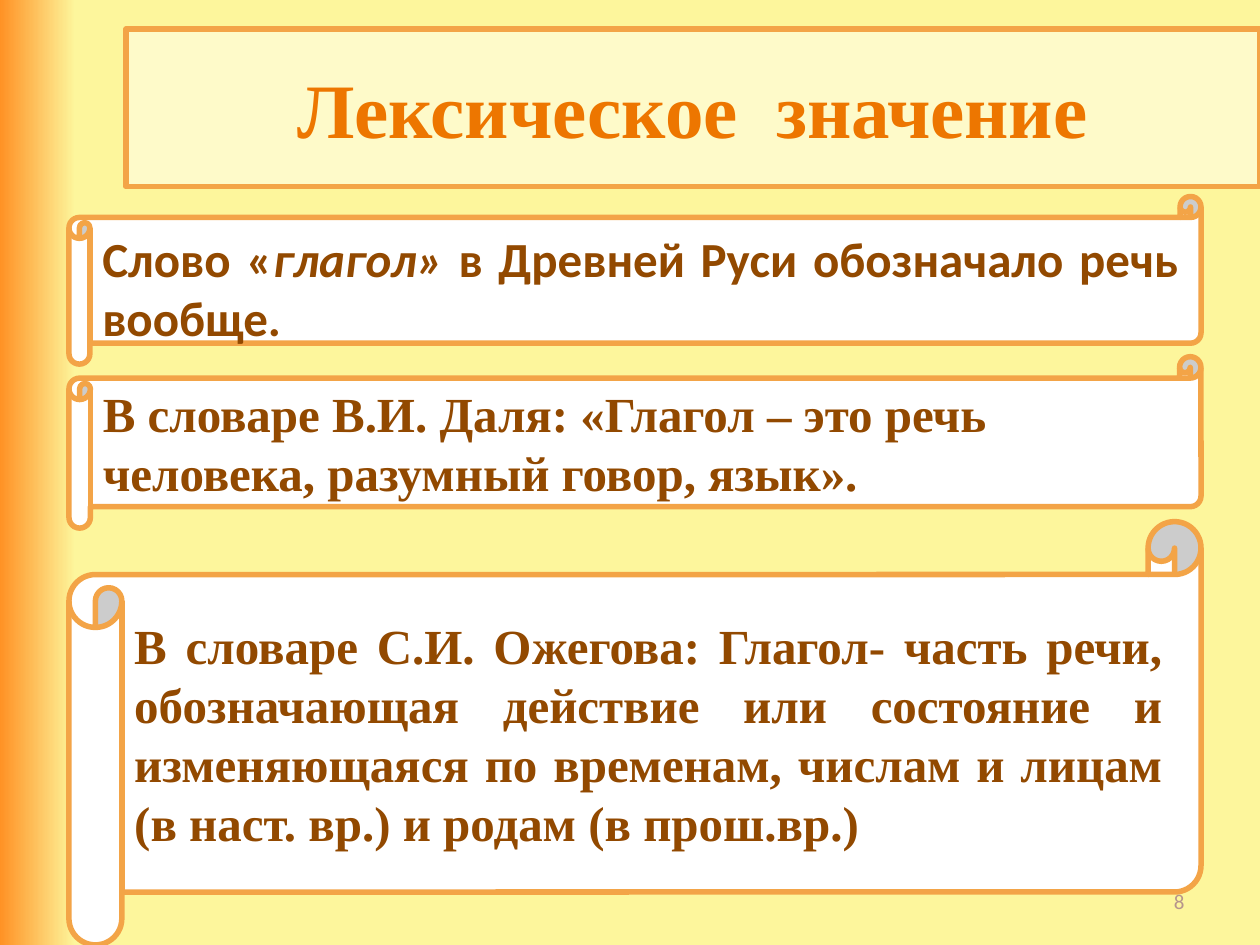
from dataclasses import dataclass

from pptx import Presentation
from pptx.dml.color import RGBColor
from pptx.enum import shapes, text
from pptx.util import Pt


@dataclass(frozen=True)
class Theme:
    yellow: str = "FDF69C"
    orange: str = "FF9225"
    white: str = "FFFFFF"
    cream: str = "FEFAC9"
    border: str = "F3A447"
    brown: str = "924900"
    title: str = "ED7600"
    muted: str = "B6958C"
    serif: str = "Times New Roman"
    sans: str = "Calibri"
    title_size: int = 44
    body_size: int = 28
    number_size: int = 12


theme = Theme()
align = text.PP_ALIGN
kinds = shapes.MSO_SHAPE


def write(sp, *parts, font=theme.serif, size=theme.body_size, color=theme.brown,
          bold=True, alignment=align.JUSTIFY):
    tf = sp.text_frame
    tf.word_wrap = True
    tf.vertical_anchor = text.MSO_ANCHOR.MIDDLE
    p = tf.paragraphs[0]
    p.alignment = alignment
    for words, italic in parts:
        r = p.add_run()
        r.text = words
        r.font.name = font
        r.font.size = Pt(size)
        r.font.bold = bold
        r.font.italic = italic
        r.font.color.rgb = RGBColor.from_string(color)


def add_panel(kind, box, fill):
    sp = s.shapes.add_shape(kind, *map(Pt, box))
    sp.shadow.inherit = False
    sp.fill.solid()
    sp.fill.fore_color.rgb = RGBColor.from_string(fill)
    sp.line.color.rgb = RGBColor.from_string(theme.border)
    sp.line.width = Pt(3.15)
    return sp


prs = Presentation()
prs.slide_width, prs.slide_height = Pt(720), Pt(540)
s = prs.slides.add_slide(prs.slide_layouts[6])

bg = s.background.fill
bg.gradient()
bg.gradient_angle = 180
for stop, position, color in zip(bg.gradient_stops, (0.94, 1), (theme.yellow, theme.orange)):
    stop.position = position
    stop.color.rgb = RGBColor.from_string(color)

scrolls = [
    (298.1, 241.9, 3.6, 3.6, align.JUSTIFY, theme.serif,
     [("В словаре С.И. Ожегова: Глагол- часть речи, обозначающая действие или состояние "
       "и изменяющаяся по временам, числам и лицам (в наст. вр.) и родам (в прош.вр.)", False)]),
    (203.8, 98, 3.6, 3.6, align.LEFT, theme.serif,
     [("В словаре В.И. Даля: «Глагол – это речь человека, разумный говор, язык».", False)]),
    (112.3, 95.8, 8, 0, align.JUSTIFY, theme.sans,
     [("Слово «", False), ("глагол» ", True),
      ("в Древней Руси обозначало речь вообще.", False)]),
]
for top, height, inset_top, inset_bottom, alignment, font, parts in scrolls:
    scroll = add_panel(kinds.HORIZONTAL_SCROLL, (39.4, top, 646.9, height), theme.white)
    scroll.text_frame.margin_top = Pt(inset_top)
    scroll.text_frame.margin_bottom = Pt(inset_bottom)
    write(scroll, *parts, font=font, alignment=alignment)

number = s.shapes.add_textbox(Pt(516), Pt(500.5), Pt(168), Pt(28.8))
write(number, ("8", False), font=theme.sans, size=theme.number_size,
      color=theme.muted, bold=False, alignment=align.RIGHT)

title = add_panel(kinds.RECTANGLE, (72, 16.7, 648, 90), theme.cream)
write(title, ("Лексическое  значение", False), size=theme.title_size,
      color=theme.title, alignment=align.CENTER)

prs.save("out.pptx")
